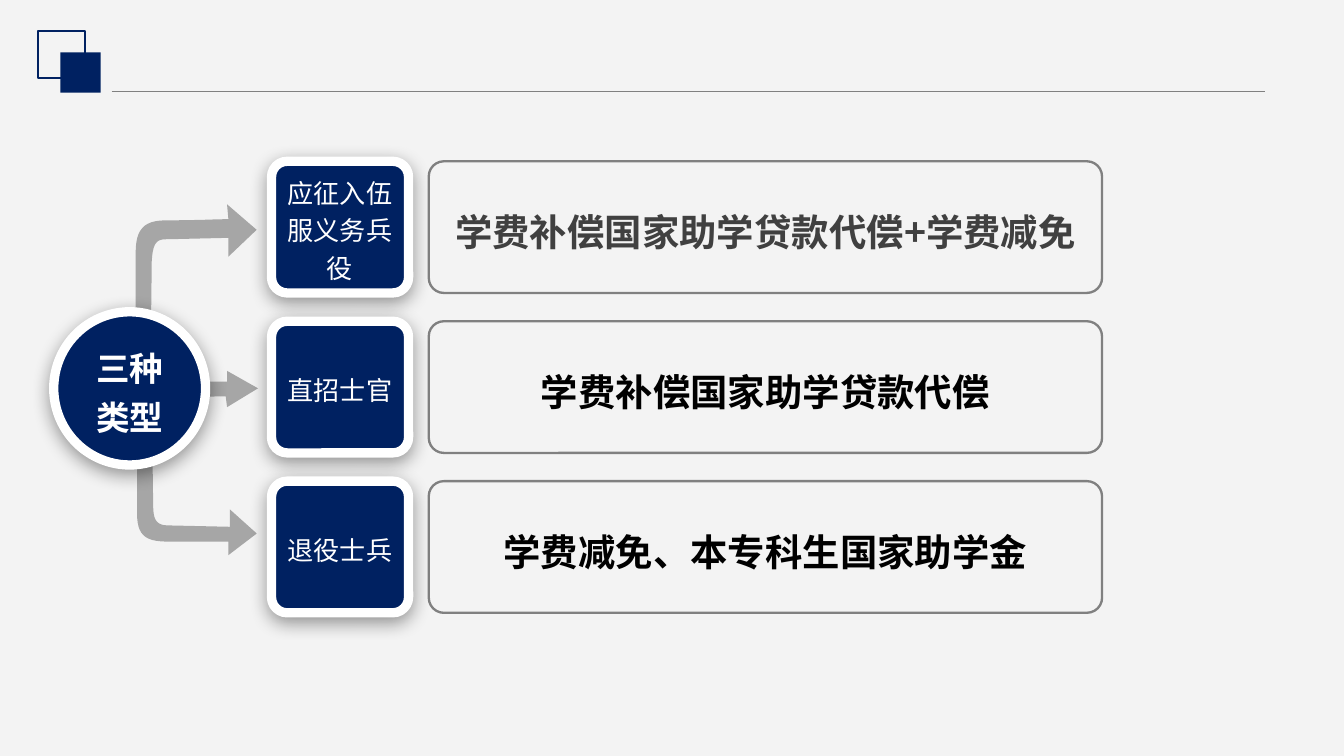
from lxml.etree import SubElement
from pptx import Presentation
from pptx.dml.color import RGBColor
from pptx.enum.shapes import MSO_CONNECTOR, MSO_SHAPE
from pptx.enum.text import MSO_ANCHOR, PP_ALIGN
from pptx.oxml import parse_xml
from pptx.oxml.ns import nsdecls, qn
from pptx.util import Inches, Pt

NAVY = RGBColor(0x00, 0x21, 0x61)
GRAY = RGBColor(0x80, 0x80, 0x80)
ARROW_GRAY = RGBColor(0xA6, 0xA6, 0xA6)
DARK = RGBColor(0x40, 0x40, 0x40)
BLACK = RGBColor(0x00, 0x00, 0x00)
WHITE = RGBColor(0xFF, 0xFF, 0xFF)
BACKGROUND = RGBColor(0xF3, 0xF3, 0xF3)
FONT = "Noto Sans CJK SC"

ROWS = [
    ("应征入伍服义务兵役", "学费补偿国家助学贷款代偿+学费减免", DARK),
    ("直招士官", "学费补偿国家助学贷款代偿", BLACK),
    ("退役士兵", "学费减免、本专科生国家助学金", BLACK),
]
ROW_PITCH = 1.19

UP_ARROW = [
    (0.11, 1.28), (0.12, 0.42), (0.13, 0.26, 0.17, 0.26, 0.25, 0.26),
    (0.69, 0.25), (0.69, 0.39), (0.9, 0.19), (0.68, 0), (0.69, 0.11),
    (0.69, 0.11, 0.39, 0.12, 0.22, 0.12), (0.06, 0.12, 0, 0.19, 0, 0.36),
    (0, 1.29), (0.02, 1.45, 0.09, 1.43, 0.11, 1.28),
]
MIDDLE_ARROW = [
    (0, 0.2), (0.83, 0.19), (0.84, 0.27), (1.07, 0.13), (0.84, 0),
    (0.84, 0.08), (0, 0.08),
]
DOWN_ARROW = [
    (0.11, 0.15), (0.12, 0.89), (0.12, 1.02, 0.17, 1.03, 0.25, 1.03),
    (0.69, 1.04), (0.69, 0.91), (0.89, 1.09), (0.68, 1.25), (0.68, 1.15),
    (0.68, 1.15, 0.39, 1.15, 0.22, 1.15), (0.05, 1.15, 0, 1.09, 0, 0.94),
    (0, 0.13), (0.01, 0, 0.08, 0.02, 0.11, 0.15),
]


def add_box(s, kind, x, y, w, h, fill=None, line=None, width=1, adj=None):
    sp = s.shapes.add_shape(kind, Inches(x), Inches(y), Inches(w), Inches(h))
    sp.shadow.inherit = False
    if fill is None:
        sp.fill.background()
    else:
        sp.fill.solid()
        sp.fill.fore_color.rgb = fill
    if line is None:
        sp.line.fill.background()
    else:
        sp.line.color.rgb = line
        sp.line.width = Pt(width)
    if adj is not None:
        sp.adjustments[0] = adj
    return sp


def add_shadow(sp):
    effects = sp._element.spPr.find(qn("a:effectLst"))
    effects.append(parse_xml(
        f'<a:outerShdw {nsdecls("a")} blurRad="{Pt(10)}" dist="{Pt(3)}" '
        'dir="5400000" algn="t" rotWithShape="0"><a:srgbClr val="000000">'
        '<a:alpha val="40000"/></a:srgbClr></a:outerShdw>'))


def set_text(sp, text, size, color, bold=False):
    tf = sp.text_frame
    frame = {"word_wrap": True, "vertical_anchor": MSO_ANCHOR.MIDDLE,
             "margin_left": Inches(0.07), "margin_right": Inches(0.07),
             "margin_top": Inches(0.03), "margin_bottom": Inches(0.03)}
    for name, value in frame.items():
        setattr(tf, name, value)
    p = tf.paragraphs[0]
    p.alignment = PP_ALIGN.CENTER
    p.line_spacing = 1.2
    r = p.add_run()
    r.text = text
    for name, value in {"name": FONT, "size": Pt(size), "bold": bold}.items():
        setattr(r.font, name, value)
    r.font.color.rgb = color
    SubElement(r._r.get_or_add_rPr(), qn("a:ea"), typeface=FONT)


def trace(segments, steps=12):
    points = [segments[0]]
    for segment in segments[1:]:
        if len(segment) == 2:
            points.append(segment)
            continue
        x0, y0 = points[-1]
        x1, y1, x2, y2, x3, y3 = segment
        for i in range(1, steps + 1):
            t = i / steps
            u = 1 - t
            a, b, c, d = u ** 3, 3 * u * u * t, 3 * u * t * t, t ** 3
            points.append((a * x0 + b * x1 + c * x2 + d * x3,
                           a * y0 + b * y1 + c * y2 + d * y3))
    return [(Inches(x), Inches(y)) for x, y in points]


def add_arrow(s, x, y, segments):
    start, *rest = trace(segments)
    builder = s.shapes.build_freeform(*start)
    builder.add_line_segments(rest, close=True)
    sp = builder.convert_to_shape(Inches(x), Inches(y))
    sp.shadow.inherit = False
    sp.fill.solid()
    sp.fill.fore_color.rgb = ARROW_GRAY
    sp.line.fill.background()


def add_header(s, x, y, w):
    rule = s.shapes.add_connector(
        MSO_CONNECTOR.STRAIGHT, Inches(x + 0.55), Inches(y + 0.45),
        Inches(x + w), Inches(y + 0.45))
    rule.line.color.rgb = GRAY
    rule.line.width = Pt(0.75)
    SubElement(rule._element.spPr, qn("a:effectLst"))
    add_box(s, MSO_SHAPE.RECTANGLE, x, y, 0.35, 0.35, line=NAVY)
    add_box(s, MSO_SHAPE.RECTANGLE, x + 0.17, y + 0.16, 0.3, 0.3, fill=NAVY)


def add_row(s, x, y, h, label, support, color):
    sp = add_box(s, MSO_SHAPE.ROUNDED_RECTANGLE, x + 1.17, y, 5.01, h,
                 line=GRAY, width=1.25, adj=0.115)
    set_text(sp, support, 20, color, bold=True)
    sp = add_box(s, MSO_SHAPE.ROUNDED_RECTANGLE, x, y, 1.02, h,
                 fill=NAVY, line=WHITE, width=5, adj=0.119)
    add_shadow(sp)
    set_text(sp, label, 14, WHITE)


def add_hub(s, x, y, w, h):
    add_arrow(s, x + 0.62, y + 0.56, DOWN_ARROW)
    add_arrow(s, x + 0.45, y + 0.44, MIDDLE_ARROW)
    add_arrow(s, x + 0.61, y - 0.8, UP_ARROW)
    sp = add_box(s, MSO_SHAPE.OVAL, x, y, w, h, fill=NAVY, line=WHITE, width=5)
    add_shadow(sp)
    set_text(sp, "三种类型", 18, WHITE, bold=True)


def main():
    prs = Presentation()
    prs.slide_width = Inches(10)
    prs.slide_height = prs.slide_width * 9 // 16
    s = prs.slides.add_slide(prs.slide_layouts[6])
    s.background.fill.solid()
    s.background.fill.fore_color.rgb = BACKGROUND
    add_header(s, 0.28, 0.23, 9.13)
    add_hub(s, 0.4, 2.32, 1.13, 1.14)
    for i, row in enumerate(ROWS):
        add_row(s, 2.02, 1.2 + i * ROW_PITCH, 0.98, *row)
    prs.save("out.pptx")


if __name__ == "__main__":
    main()
